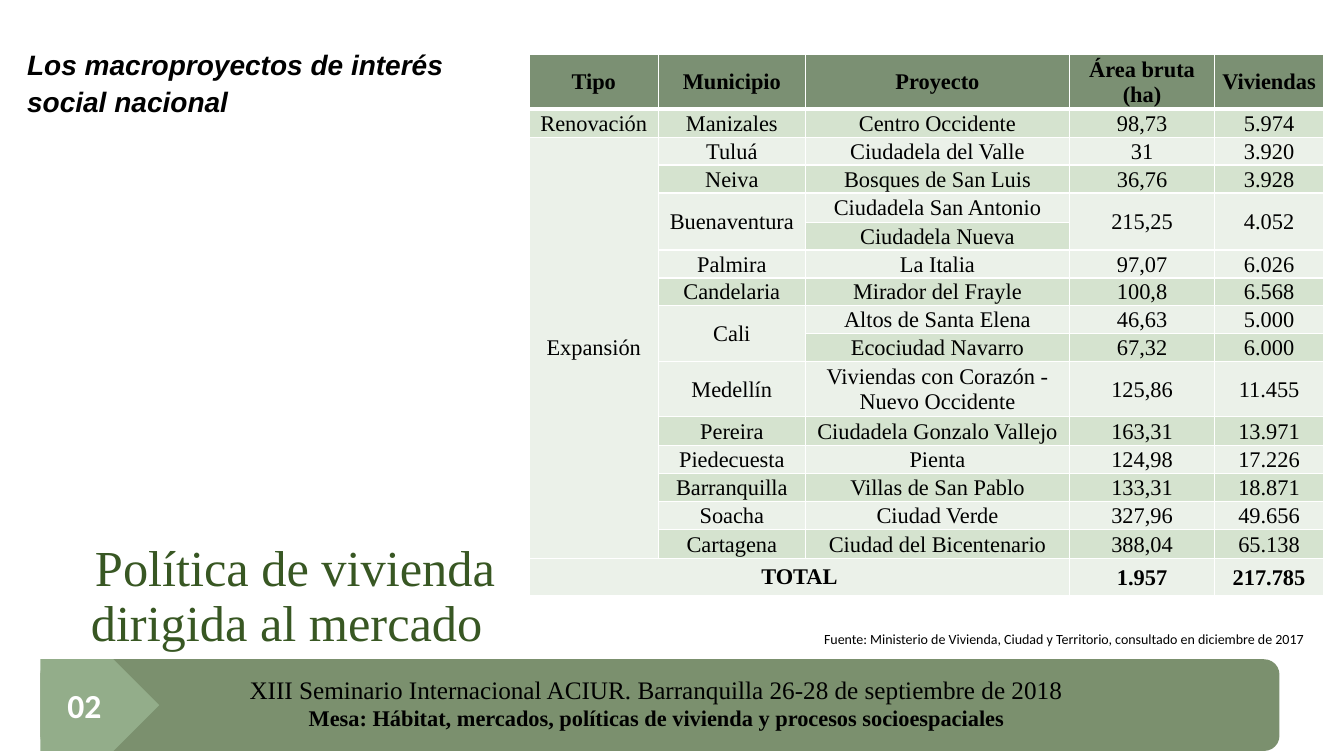
from lxml.etree import SubElement
from pptx import Presentation
from pptx.dml.color import RGBColor
from pptx.enum.shapes import MSO_SHAPE as SHAPE
from pptx.enum.text import MSO_ANCHOR as ANCHOR, PP_ALIGN as ALIGN
from pptx.oxml.ns import qn
from pptx.util import Inches, Pt

WIDTH, HEIGHT = Inches(13.33), Inches(7.5)
SERIF = "Times New Roman"
DARK_GREEN, HEADER_GREEN, TAG_GREEN = "385723", "7B9073", "93AD8A"
BANDS = ["EBF1E9", "D5E3CF"]

COLUMNS = [9.6, 10.95, 19.65, 10.8, 8.1]
ROW, TALL_ROW = 3.47, 3.87
TALL_ROWS = {4, 10, 11, 15}
MACROPROJECTS = [
    ["Tipo", "Municipio", "Proyecto", "Área bruta (ha)", "Viviendas"],
    ["Renovación", "Manizales", "Centro Occidente", "98,73", "5.974"],
    ["Expansión", "Tuluá", "Ciudadela del Valle", "31", "3.920"],
    ["", "Neiva", "Bosques de San Luis", "36,76", "3.928"],
    ["", "Buenaventura", "Ciudadela San Antonio", "215,25", "4.052"],
    ["", "", "Ciudadela Nueva", "", ""],
    ["", "Palmira", "La Italia", "97,07", "6.026"],
    ["", "Candelaria", "Mirador del Frayle", "100,8", "6.568"],
    ["", "Cali", "Altos de Santa Elena", "46,63", "5.000"],
    ["", "", "Ecociudad Navarro", "67,32", "6.000"],
    ["", "Medellín", "Viviendas con Corazón - Nuevo Occidente", "125,86", "11.455"],
    ["", "Pereira", "Ciudadela Gonzalo Vallejo", "163,31", "13.971"],
    ["", "Piedecuesta", "Pienta", "124,98", "17.226"],
    ["", "Barranquilla", "Villas de San Pablo", "133,31", "18.871"],
    ["", "Soacha", "Ciudad Verde", "327,96", "49.656"],
    ["", "Cartagena", "Ciudad del Bicentenario", "388,04", "65.138"],
    ["TOTAL", "", "", "1.957", "217.785"],
]
TOTAL_ROW = len(MACROPROJECTS) - 1
MERGES = [(2, 0, 15, 0), (4, 1, 5, 1), (4, 3, 5, 3), (4, 4, 5, 4),
          (8, 1, 9, 1), (TOTAL_ROW, 0, TOTAL_ROW, 2)]
ROOMY_CELLS = {(2, 0), (TOTAL_ROW, 0)}


def rgb(color):
    return RGBColor.from_string(color)


def across(percent):
    return round(WIDTH * percent / 100)


def down(percent):
    return round(HEIGHT * percent / 100)


def box(x, y, w, h):
    return across(x), down(y), across(w), down(h)


def style(p, size, font=SERIF, color="000000", bold=False, italic=False, align=ALIGN.CENTER):
    p.alignment = align
    for r in p.runs:
        r.font.size, r.font.name = Pt(size), font
        r.font.bold, r.font.italic = bold, italic
        r.font.color.rgb = rgb(color)


def add_text(s, place, text, anchor=ANCHOR.TOP):
    tf = s.shapes.add_textbox(*box(*place)).text_frame
    tf.word_wrap = True
    tf.vertical_anchor = anchor
    tf.text = text
    return tf.paragraphs


def add_block(s, kind, place, color, opacity=100):
    sp = s.shapes.add_shape(kind, *box(*place))
    sp.shadow.inherit = False
    sp.fill.solid()
    sp.fill.fore_color.rgb = rgb(color)
    sp.line.fill.background()
    if opacity < 100:
        tint = sp.fill._xPr.find(qn("a:solidFill"))[0]
        SubElement(tint, qn("a:alpha"), val=str(opacity * 1000))


def add_border(cell, side, width):
    ln = SubElement(cell._tc.get_or_add_tcPr(), qn(f"a:ln{side}"), w=str(Pt(width)))
    fill = SubElement(ln, qn("a:solidFill"))
    SubElement(fill, qn("a:srgbClr"), val="FFFFFF")


def fill_cell(cell, row, col):
    cell.text = MACROPROJECTS[row][col]
    cell.vertical_anchor = ANCHOR.MIDDLE
    if (row, col) not in ROOMY_CELLS:
        cell.margin_left = cell.margin_right = cell.margin_top = Inches(0.01)
        cell.margin_bottom = 0
    style(cell.text_frame.paragraphs[0], 16, bold=row in (0, TOTAL_ROW))
    for side in "LRTB":
        under_header = (row, side) in {(0, "B"), (1, "T")}
        add_border(cell, side, 3 if under_header else 1)
    cell.fill.solid()
    cell.fill.fore_color.rgb = rgb(BANDS[row % 2] if row else HEADER_GREEN)


def add_projects_table(s, x, y):
    heights = [TALL_ROW if i in TALL_ROWS else ROW for i in range(len(MACROPROJECTS))]
    place = box(x, y, sum(COLUMNS), sum(heights))
    table = s.shapes.add_table(len(heights), len(COLUMNS), *place).table
    for column, width in zip(table.columns, COLUMNS):
        column.width = across(width)
    for i, height in enumerate(heights):
        table.rows[i].height = down(height)
        for j in range(len(COLUMNS)):
            fill_cell(table.cell(i, j), i, j)
    for top, left, bottom, right in MERGES:
        table.cell(top, left).merge(table.cell(bottom, right))


def add_footer(s):
    add_block(s, SHAPE.ROUNDED_RECTANGLE, (3, 87.2, 92.2, 12.13), DARK_GREEN, 66)
    seminar, panel = add_text(
        s, (11.85, 88.53, 74.42, 9.47),
        "XIII Seminario Internacional ACIUR. Barranquilla 26-28 de septiembre de 2018 \n"
        "Mesa: Hábitat, mercados, políticas de vivienda y procesos socioespaciales ")
    style(seminar, 18)
    style(panel, 16, bold=True)
    add_block(s, SHAPE.PENTAGON, (3, 87.2, 8.85, 12.13), TAG_GREEN)
    number, = add_text(s, (3.23, 89.87, 6.08, 6.67), "02", ANCHOR.MIDDLE)
    style(number, 24, "Calibri", "FFFFFF", bold=True)


def main():
    prs = Presentation()
    prs.slide_width, prs.slide_height = WIDTH, HEIGHT
    s = prs.slides.add_slide(prs.slide_layouts[6])

    add_footer(s)

    title, = add_text(s, (5.33, 63.6, 32.26, 23.33),
                      "Política de vivienda dirigida al mercado ", ANCHOR.BOTTOM)
    style(title, 36, color=DARK_GREEN, align=ALIGN.RIGHT)
    title.line_spacing = 0.9

    add_projects_table(s, 39.38, 7.2)

    topic, = add_text(s, (1.28, 5.2, 36.68, 55.6),
                      "Los macroproyectos de interés social nacional")
    style(topic, 20, "Arial", bold=True, italic=True, align=ALIGN.LEFT)
    topic.line_spacing = 1.1
    topic.space_before = topic.space_after = Pt(8)

    source, = add_text(s, (51.39, 82.8, 46.81, 4),
                       "Fuente: Ministerio de Vivienda, Ciudad y Territorio, consultado en diciembre de 2017  ")
    style(source, 10, "Calibri", align=ALIGN.RIGHT)

    prs.save("out.pptx")


if __name__ == "__main__":
    main()
